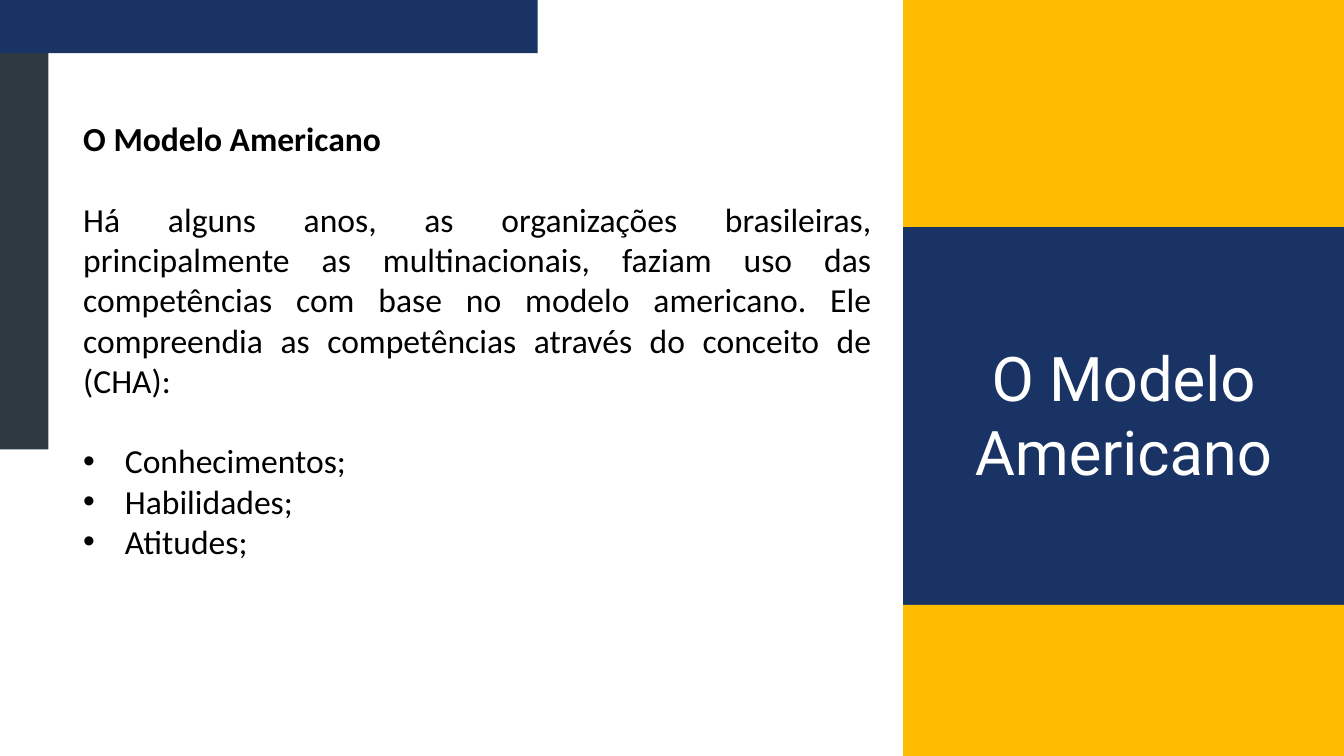
from collections import namedtuple
from dataclasses import dataclass

from lxml.etree import SubElement
from pptx import Presentation
from pptx.dml.color import RGBColor
from pptx.enum.shapes import MSO_SHAPE as Shape
from pptx.enum.text import MSO_ANCHOR as Anchor, MSO_AUTO_SIZE as AutoSize, PP_ALIGN as Align
from pptx.oxml.ns import qn
from pptx.util import Inches, Pt

Box = namedtuple("Box", "left top width height")


@dataclass(frozen=True)
class Theme:
    navy: RGBColor = RGBColor(0x1A, 0x33, 0x65)
    slate: RGBColor = RGBColor(0x2F, 0x39, 0x42)
    yellow: RGBColor = RGBColor(0xFF, 0xBB, 0x00)
    white: RGBColor = RGBColor(0xFF, 0xFF, 0xFF)
    black: RGBColor = RGBColor(0x00, 0x00, 0x00)
    body_font: str = "Calibri"
    title_font: str = "Roboto"
    body_size: int = 36
    title_size: int = 66
    section_gap: int = 43


THEME = Theme()


def add_block(page, box, color):
    block = page.shapes.add_shape(Shape.RECTANGLE, *map(Inches, box))
    block.shadow.inherit = False
    block.fill.solid()
    block.fill.fore_color.rgb = color
    block.line.fill.background()


def add_span(para, text, font, size, color, bold=False):
    span = para.add_run()
    span.text = text
    span.font.name = font
    span.font.size = Pt(size)
    span.font.color.rgb = color
    span.font.bold = bold


def set_bullet(para, indent):
    properties = para._p.get_or_add_pPr()
    properties.set("marL", str(Inches(indent)))
    properties.set("indent", str(-Inches(indent)))
    SubElement(properties, qn("a:buFont"), typeface="Arial")
    SubElement(properties, qn("a:buChar"), char="•")


def add_corner(page, box):
    bar_height = 0.79
    overlap = 0.33
    side_top = box.top + bar_height - overlap
    add_block(page, Box(box.left, side_top, 0.72, box.top + box.height - side_top), THEME.slate)
    add_block(page, Box(box.left, box.top, box.width, bar_height), THEME.navy)


def add_body(page, box, heading, paragraph, items):
    frame = page.shapes.add_textbox(*map(Inches, box)).text_frame
    frame.word_wrap = True
    lines = [heading, paragraph, *items]
    for index, text in enumerate(lines):
        para = frame.add_paragraph() if index else frame.paragraphs[0]
        para.alignment = Align.JUSTIFY
        if index in (1, 2):
            para.space_before = Pt(THEME.section_gap)
        if index >= 2:
            set_bullet(para, 0.62)
        add_span(para, text, THEME.body_font, THEME.body_size, THEME.black, bold=index == 0)


def add_title_panel(page, box, text):
    band_top, band_height = 3.38, 5.62
    band_bottom = band_top + band_height
    add_block(page, Box(box.left, box.top, box.width, band_top), THEME.yellow)
    add_block(page, Box(box.left, box.top + band_top, box.width, band_height), THEME.navy)
    add_block(page, Box(box.left, box.top + band_bottom, box.width, box.height - band_bottom), THEME.yellow)

    title = page.shapes.title
    margin = 0.15
    title.left, title.top = Inches(box.left + margin), Inches(box.top + 5.06)
    title.width, title.height = Inches(box.width - 2 * margin), Inches(2.22)
    title.element.getparent().append(title.element)
    frame = title.text_frame
    frame.margin_left = frame.margin_right = frame.margin_top = frame.margin_bottom = 0
    frame.word_wrap = True
    frame.auto_size = AutoSize.NONE
    frame.vertical_anchor = Anchor.TOP
    para = frame.paragraphs[0]
    para.alignment = Align.CENTER
    add_span(para, text, THEME.title_font, THEME.title_size, THEME.white)


def main():
    deck = Presentation()
    deck.slide_width, deck.slide_height = Inches(20), Inches(11.25)
    page = deck.slides.add_slide(deck.slide_layouts[5])
    add_corner(page, Box(0, 0, 8, 6.69))
    add_body(
        page,
        Box(1.14, 1.71, 11.93, 7.98),
        "O Modelo Americano",
        "Há alguns anos, as organizações brasileiras, principalmente as multinacionais, "
        "faziam uso das competências com base no modelo americano. Ele compreendia as "
        "competências através do conceito de (CHA):",
        ["Conhecimentos;", "Habilidades;", "Atitudes;"],
    )
    add_title_panel(page, Box(13.44, 0, 6.56, 11.25), "O Modelo Americano")
    deck.save("out.pptx")


if __name__ == "__main__":
    main()
